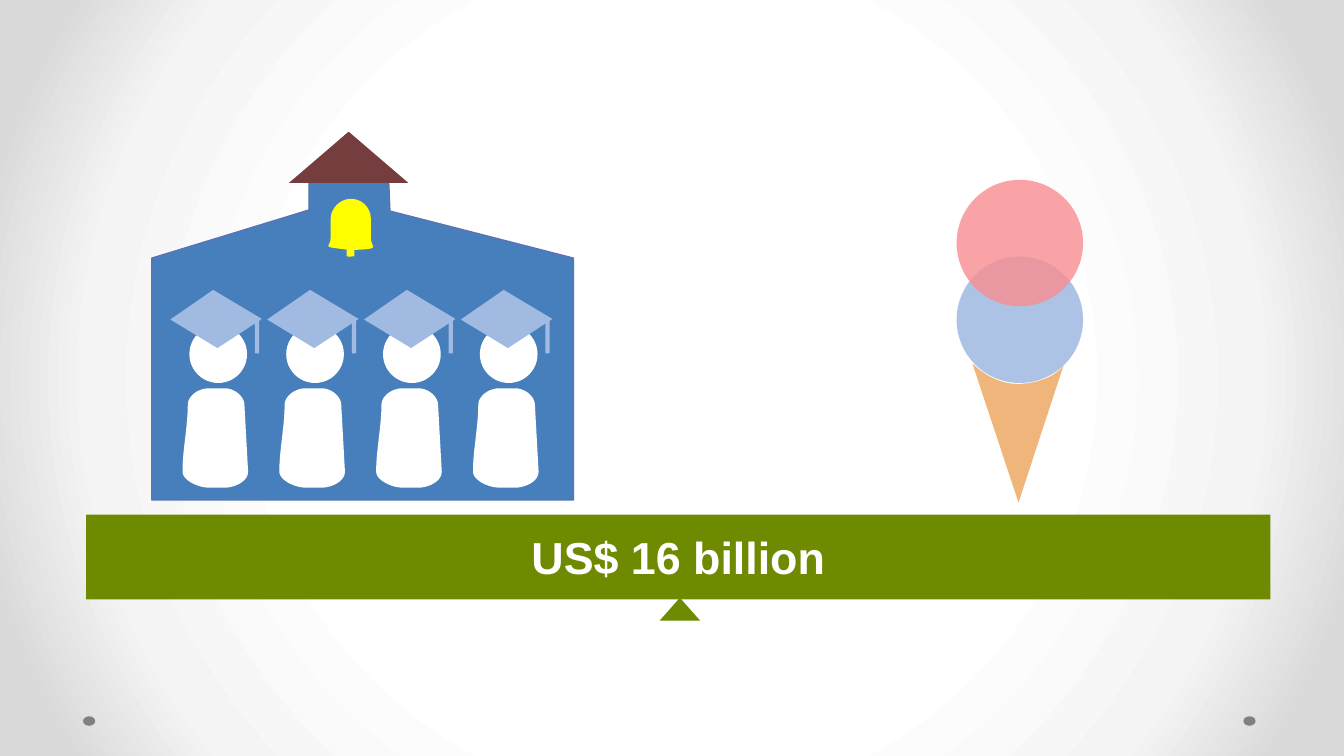
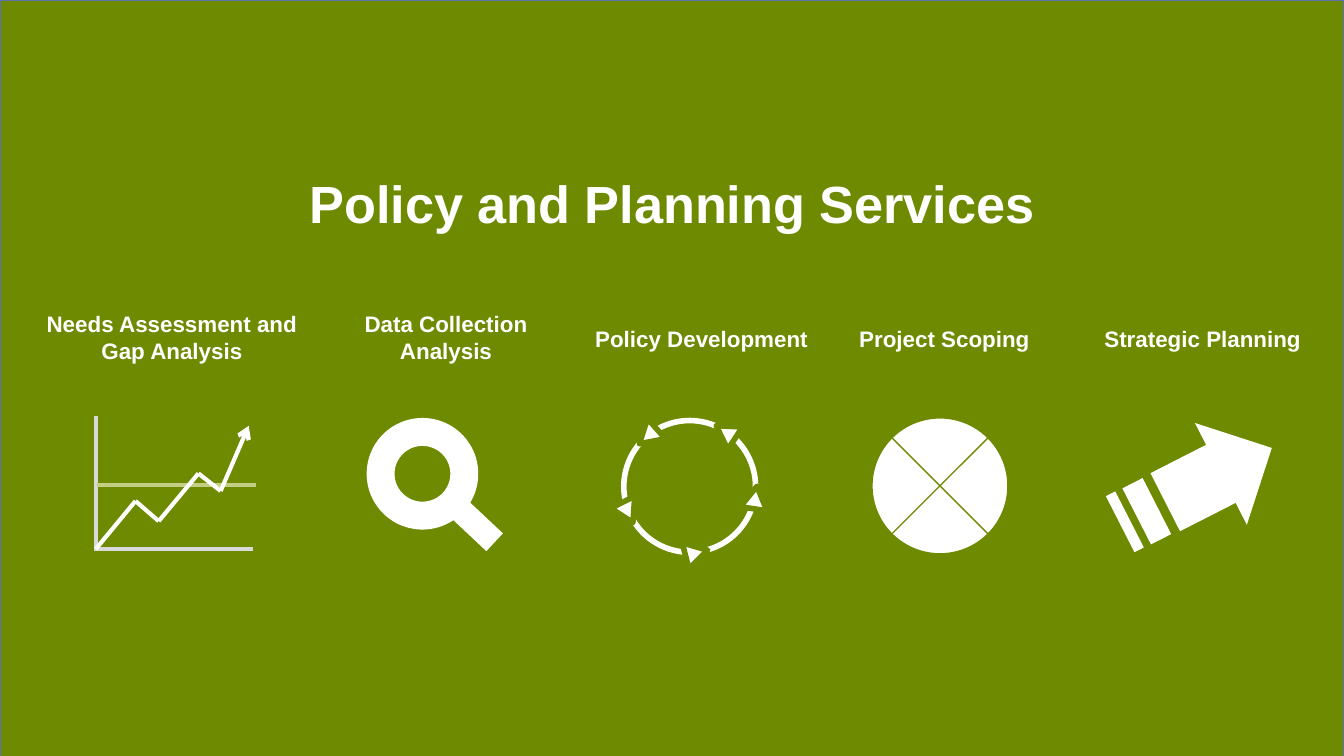
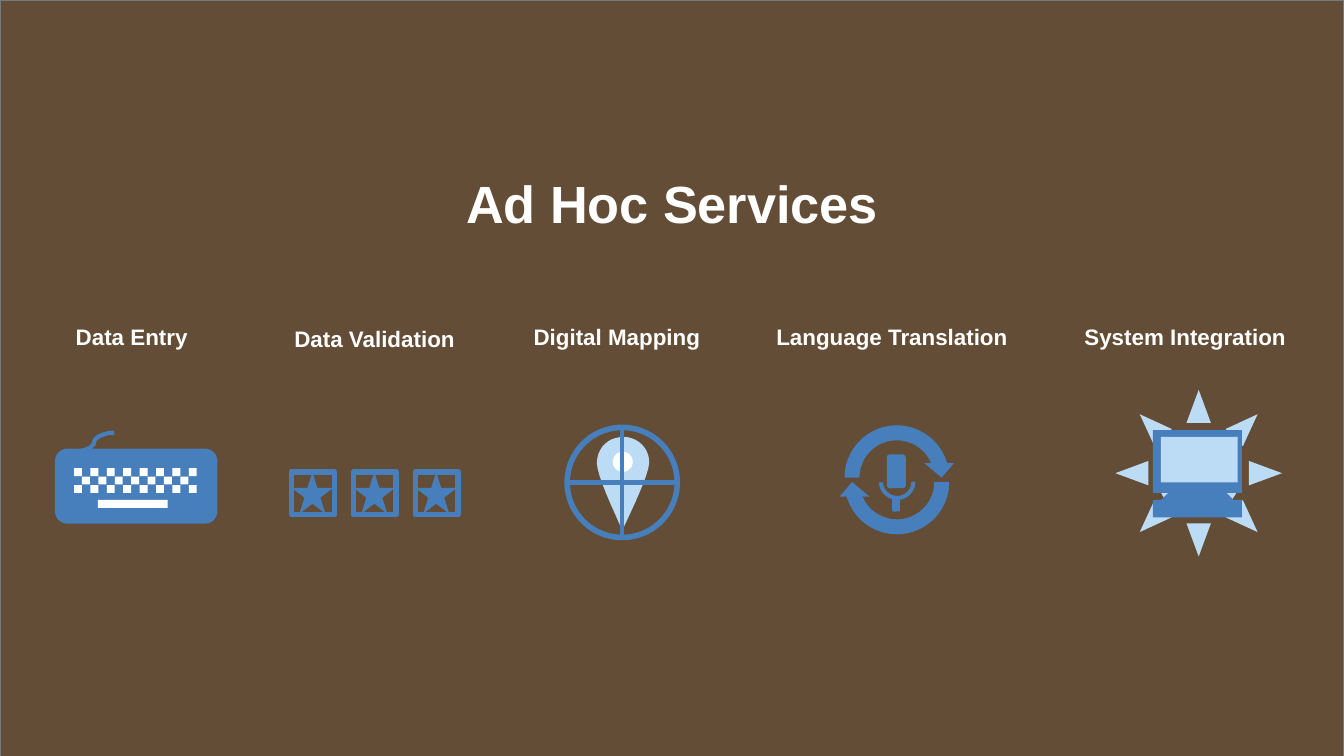
from itertools import pairwise

from pptx import Presentation
from pptx import util as u
from pptx.dml.color import RGBColor
from pptx.enum import shapes, text
from pptx.oxml import parse_xml
from pptx.oxml.ns import nsdecls

KIND = shapes.MSO_SHAPE
FONT = "Arial"
HUES = {
    "white": "FFFFFF", "pale": "F4F4F4", "mist": "DADADA", "dot": "808080",
    "green": "6E8A00", "lime": "C3D083", "brown": "634D36", "slate": "727D82",
    "blue": "477FBD", "edge": "5C72B2", "cap": "A0BAE1", "sky": "BBDCF4",
    "roof": "753D3D", "bell": "FFFF00", "pink": "F88D90", "cone": "F0B57A",
    "axis": "D9D9D9",
}


def hue(name):
    return RGBColor.from_string(HUES[name])


def paint(shape, fill, line, wide):
    shape.shadow.inherit = False
    if fill:
        shape.fill.solid()
        shape.fill.fore_color.rgb = hue(fill)
    else:
        shape.fill.background()
    if line:
        shape.line.color.rgb = hue(line)
        shape.line.width = u.Pt(wide)
    else:
        shape.line.fill.background()
    return shape


def bend(start, move, steps=10):
    """Points along a cubic curve that leaves start."""
    ax, ay = start
    bx, by, cx, cy, dx, dy = move
    for i in range(1, steps + 1):
        t = i / steps
        s = 1 - t
        k = (s ** 3, 3 * s * s * t, 3 * s * t * t, t ** 3)
        yield (k[0] * ax + k[1] * bx + k[2] * cx + k[3] * dx,
               k[0] * ay + k[1] * by + k[2] * cy + k[3] * dy)


class Pen:
    """Draws on a set of shapes, in cm from its own corner."""

    def __init__(self, art, x=0, y=0):
        self.art, self.x, self.y = art, x, y

    def shift(self, x, y):
        return Pen(self.art, self.x + x, self.y + y)

    def group(self, x, y):
        return Pen(self.art.add_group_shape().shapes, self.x + x, self.y + y)

    def spot(self, x, y):
        return u.Cm(self.x + x), u.Cm(self.y + y)

    def form(self, kind, x, y, w, h, fill=None, line=None, wide=0.75,
             turn=0, tune=(), alpha=None):
        shape = self.art.add_shape(kind, *self.spot(x, y), u.Cm(w), u.Cm(h))
        paint(shape, fill, line, wide)
        shape.rotation = turn
        for i, value in enumerate(tune):
            shape.adjustments[i] = value
        if alpha:
            tint = shape._element.xpath("./p:spPr/a:solidFill/a:srgbClr")[0]
            tint.append(parse_xml(
                f'<a:alpha {nsdecls("a")} val="{alpha * 1000}"/>'))
        return shape

    def wire(self, start, end, color, arrow=False, curve=False):
        kind = shapes.MSO_CONNECTOR
        line = self.art.add_connector(
            kind.CURVE if curve else kind.STRAIGHT,
            *self.spot(*start), *self.spot(*end))
        line.line.color.rgb = hue(color)
        line.line.width = u.Pt(2.25)
        if arrow:
            line.line._get_or_add_ln().append(
                parse_xml(f'<a:tailEnd {nsdecls("a")} type="arrow"/>'))
        line._element.spPr.append(parse_xml(f'<a:effectLst {nsdecls("a")}/>'))

    def trace(self, start, moves, fill, line=None):
        """Closed outline: a pair is a straight side, six numbers a curve."""
        path = [start]
        for move in moves:
            path.extend([move] if len(move) == 2 else bend(path[-1], move))
        first, *rest = [self.spot(*point) for point in path]
        draft = self.art.build_freeform(*first)
        draft.add_line_segments(rest, close=True)
        paint(draft.convert_to_shape(), fill, line, 0.75)

    def note(self, words, x, y, w, h, size, wrap=True):
        frame = self.art.add_textbox(
            *self.spot(x, y), u.Cm(w), u.Cm(h)).text_frame
        frame.word_wrap = wrap
        frame.auto_size = text.MSO_AUTO_SIZE.SHAPE_TO_FIT_TEXT
        say(frame, words, size)


def say(frame, words, size):
    line = frame.paragraphs[0]
    line.alignment = text.PP_ALIGN.CENTER
    run = line.add_run()
    run.text = words
    run.font.name, run.font.size, run.font.bold = FONT, u.Pt(size), True
    run.font.color.rgb = hue("white")


def glow(master):
    """Round grey gradient behind every slide."""
    master.background.fill.solid()
    back = master._element.xpath(".//p:bgPr")[0]
    stops = "".join(
        f'<a:gs pos="{pos}000"><a:srgbClr val="{HUES[name]}"/></a:gs>'
        for pos, name in ((50, "white"), (76, "pale"), (92, "mist")))
    back.replace(back[0], parse_xml(
        f'<a:gradFill {nsdecls("a")} rotWithShape="1"><a:gsLst>{stops}</a:gsLst>'
        '<a:path path="circle"><a:fillToRect l="50000" t="50000" r="50000"'
        ' b="50000"/></a:path></a:gradFill>'))


# Balance slide

def pupil(pen):
    pen.form(KIND.OVAL, 0.13, 0.71, 1.09, 1.09, "white")
    pen.trace((0.1, 2.21), [
        (0.1, 2.06, 0.28, 1.9, 0.51, 1.9), (0.79, 1.9),
        (0.99, 1.9, 1.17, 2.06, 1.17, 2.21), (1.24, 3.48),
        (1.24, 3.66, 0.99, 3.78, 0.79, 3.78), (0.51, 3.78),
        (0.28, 3.78, 0, 3.63, 0, 3.48),
        (0, 3.05, 0.1, 2.64, 0.1, 2.21)], "white")
    pen.trace((0.58, 0.04), [(1.5, 0.59), (0.66, 1.14), (-0.23, 0.6)], "cap")
    pen.trace((1.37, 0.66), [(1.45, 0.61), (1.45, 1.24), (1.37, 1.24)], "cap")


def school(pen):
    pen.trace((0, 2.39), [
        (2.97, 1.48), (2.97, 0.74), (4.47, 0.78), (4.5, 1.5),
        (7.97, 2.39), (7.97, 6.96), (0, 6.96)], "blue", "edge")
    pen.form(KIND.ISOSCELES_TRIANGLE, 2.59, 0, 2.26, 0.97, "roof")
    pen.trace((3.38, 1.65), [
        (3.38, 1.45, 3.56, 1.27, 3.76, 1.27),
        (3.99, 1.27, 4.14, 1.45, 4.14, 1.65), (4.14, 2.01),
        (4.14, 2.21, 4.37, 2.21, 3.76, 2.24),
        (3.15, 2.16, 3.38, 2.21, 3.38, 2.01)], "bell")
    pen.form(KIND.ROUNDED_RECTANGLE, 3.68, 2.11, 0.15, 0.25, "bell")
    for i in range(4):
        pupil(pen.shift(0.58 + i * 1.83, 2.95))


def ice(pen):
    pen.form(KIND.OVAL, 0, 1.45, 2.39, 2.39, "cap", alpha=86)
    pen.form(KIND.OVAL, 0, 0, 2.39, 2.39, "pink", alpha=80)
    pen.trace((0.3, 3.48), [
        (1.17, 6.1), (2.03, 3.48),
        (2.03, 3.53, 1.78, 3.84, 1.17, 3.86),
        (0.64, 3.86, 0.33, 3.48, 0.3, 3.48)], "cone")


def scale(pen, words):
    bar = pen.form(KIND.RECTANGLE, 0, 0, 22.38, 1.6, "green")
    bar.text_frame.vertical_anchor = text.MSO_ANCHOR.MIDDLE
    say(bar.text_frame, words, 24)
    pen.form(KIND.ISOSCELES_TRIANGLE, 10.84, 1.57, 0.76, 0.43, "green")


def balance(pen):
    for x in (23.5, 1.57):
        pen.form(KIND.OVAL, x, 13.54, 0.23, 0.18, "dot")
    school(pen.group(2.87, 2.49))
    ice(pen.group(18.08, 3.4))
    scale(pen.shift(1.63, 9.73), "US$ 16 billion")


# Policy icons

def trend(pen):
    for start, end, color in (
            ((0.03, 2.51), (0.03, 0), "axis"),
            ((0, 2.51), (3, 2.51), "axis"),
            ((0.05, 1.3), (3.05, 1.3), "lime")):
        pen.wire(start, end, color)
    points = [(0.03, 2.51), (0.78, 1.6), (1.22, 1.98), (1.97, 1.08),
              (2.39, 1.41), (2.92, 0.18)]
    for start, end in pairwise(points):
        pen.wire(start, end, "white", arrow=end == points[-1])


def lens(pen):
    pen.form(KIND.DONUT, 0, 0, 2.11, 2.11, "white", turn=313.2)
    pen.form(KIND.RECTANGLE, 1.8, 1.45, 0.46, 1.07, "white", turn=313.2)


def cycle(pen):
    pen.form(KIND.OVAL, 0.18, 0, 2.49, 2.49, line="white", wide=3)
    for x, y, turn in ((2.41, 1.24, 8.6), (1.85, 0, 303.5),
                       (0.38, 0.08, 228.4), (0, 1.52, 153.5),
                       (1.3, 2.29, 75.5)):
        pen.form(KIND.ISOSCELES_TRIANGLE, x, y, 0.51, 0.43,
                 "white", "green", 3, turn)


def scope(pen):
    pen.form(KIND.FLOWCHART_SUMMING_JUNCTION, 0, 0, 2.57, 2.57,
             "white", "green")


def thrust(pen):
    pen.form(KIND.RIGHT_ARROW, 0.74, 0, 2.26, 2.16, "white",
             turn=333, tune=(0.57, 0.5))
    for x, y, w in ((0.3, 1.17, 0.43), (0, 1.37, 0.2)):
        pen.form(KIND.RECTANGLE, x, y, w, 1.19, "white", turn=333)


# Ad hoc icons

def keys(pen):
    pen.form(KIND.ROUNDED_RECTANGLE, 0, 0.3, 3.07, 1.42, "blue")
    for row, (left, count) in enumerate(((0.36, 8), (0.51, 7), (0.36, 8))):
        for i in range(count):
            pen.form(KIND.RECTANGLE, left + i * 0.31, 0.67 + row * 0.16,
                     0.15, 0.15, "white")
    pen.form(KIND.RECTANGLE, 0.81, 1.27, 1.32, 0.15, "white")
    pen.wire((0.36, 0.36), (1.12, 0), "blue", curve=True)


def stars(pen):
    for i in range(3):
        pen.form(KIND.RECTANGLE, i * 1.17, 0, 0.81, 0.81, line="blue", wide=3)
        pen.form(KIND.STAR_5_POINT, i * 1.17, 0, 0.79, 0.79, "blue")


def chart(pen):
    """Map pin under cross hairs."""
    size = 2.08
    pen.trace((0.56, 0.66), [
        (0.58, 0.36, 0.79, 0.18, 1.07, 0.18),
        (1.32, 0.18, 1.55, 0.38, 1.55, 0.66),
        (1.55, 0.94, 1.02, 1.96, 1.04, 1.96),
        (1.07, 1.96, 0.56, 0.97, 0.56, 0.66)], "sky")
    pen.form(KIND.OVAL, 0.86, 0.46, 0.38, 0.38, "white")
    pen.form(KIND.OVAL, 0, 0, size, size, line="blue", wide=3)
    pen.wire((0, size / 2), (size, size / 2), "blue")
    pen.wire((size / 2, 0), (size / 2, size), "blue")


def speech(pen):
    for y, turn in ((0, 0), (0.08, 180)):
        pen.form(KIND.CIRCULAR_ARROW, 0, y, 2.26, 2.26, "blue", turn=turn)
    pen.form(KIND.ROUNDED_RECTANGLE, 0.94, 0.69, 0.36, 0.64, "blue")
    pen.form(KIND.BLOCK_ARC, 0.79, 0.86, 0.69, 0.69, "blue",
             turn=180, tune=(108, 214.64, 0.11))
    pen.form(KIND.ROUNDED_RECTANGLE, 1.04, 1.52, 0.15, 0.25, "blue")


def system(pen):
    pen.form(KIND.SUN, 0, 0, 3.15, 3.15, "sky", tune=(0.245,))
    pen.form(KIND.RECTANGLE, 0.71, 0.76, 1.68, 1.19, "blue")
    pen.trace((1.37, 1.57), [(1.73, 1.57), (2.39, 2.24), (0.74, 2.21)], "blue")
    pen.form(KIND.RECTANGLE, 0.86, 0.89, 1.45, 0.86, "sky")
    pen.form(KIND.RECTANGLE, 0.71, 2.08, 1.68, 0.33, "blue")


def panel(pen, title, wide, fill, line, items):
    """Full colour slide: title over a row of labelled icons."""
    pen.form(KIND.RECTANGLE, 0, 0, 25.4, 14.48, fill, line)
    pen.note(title, (25.4 - wide) / 2, 3.12, wide, 1.45, 28, wrap=False)
    for words, x, y, high, icon, left, top in items:
        pen.note(words, x, y, 5.38, high, 12)
        icon(pen.group(left, top))


POLICY = [
    ("Needs Assessment and Gap Analysis", 0.56, 5.74, 1.27, trend, 1.78, 7.87),
    ("Data Collection Analysis", 5.74, 5.74, 1.27, lens, 6.93, 7.9),
    ("Policy Development", 10.57, 6.02, 0.76, cycle, 11.61, 7.95),
    ("Project Scoping", 15.16, 6.02, 0.76, scope, 16.48, 7.9),
    ("Strategic Planning", 20.04, 6.02, 0.76, thrust, 21.16, 7.9),
]
ADHOC = [
    ("Data Entry", -0.2, 5.99, 0.76, keys, 1.04, 8.18),
    ("Data Validation", 4.39, 6.02, 0.76, stars, 5.51, 8.92),
    ("Digital Mapping", 8.97, 5.99, 0.76, chart, 10.72, 8.08),
    ("Language Translation", 14.17, 5.99, 0.76, speech, 15.82, 7.9),
    ("System Integration", 19.71, 5.99, 0.76, system, 21.08, 7.37),
]


def main():
    deck = Presentation()
    deck.slide_width, deck.slide_height = u.Cm(25.4), u.Cm(14.29)
    glow(deck.slide_master)

    def sheet():
        return Pen(deck.slides.add_slide(deck.slide_layouts[6]).shapes)

    balance(sheet())
    panel(sheet(), "Policy and Planning Services", 14.38,
          "green", "edge", POLICY)
    panel(sheet(), "Ad Hoc Services", 8.38, "brown", "slate", ADHOC)
    deck.save("out.pptx")


if __name__ == "__main__":
    main()
